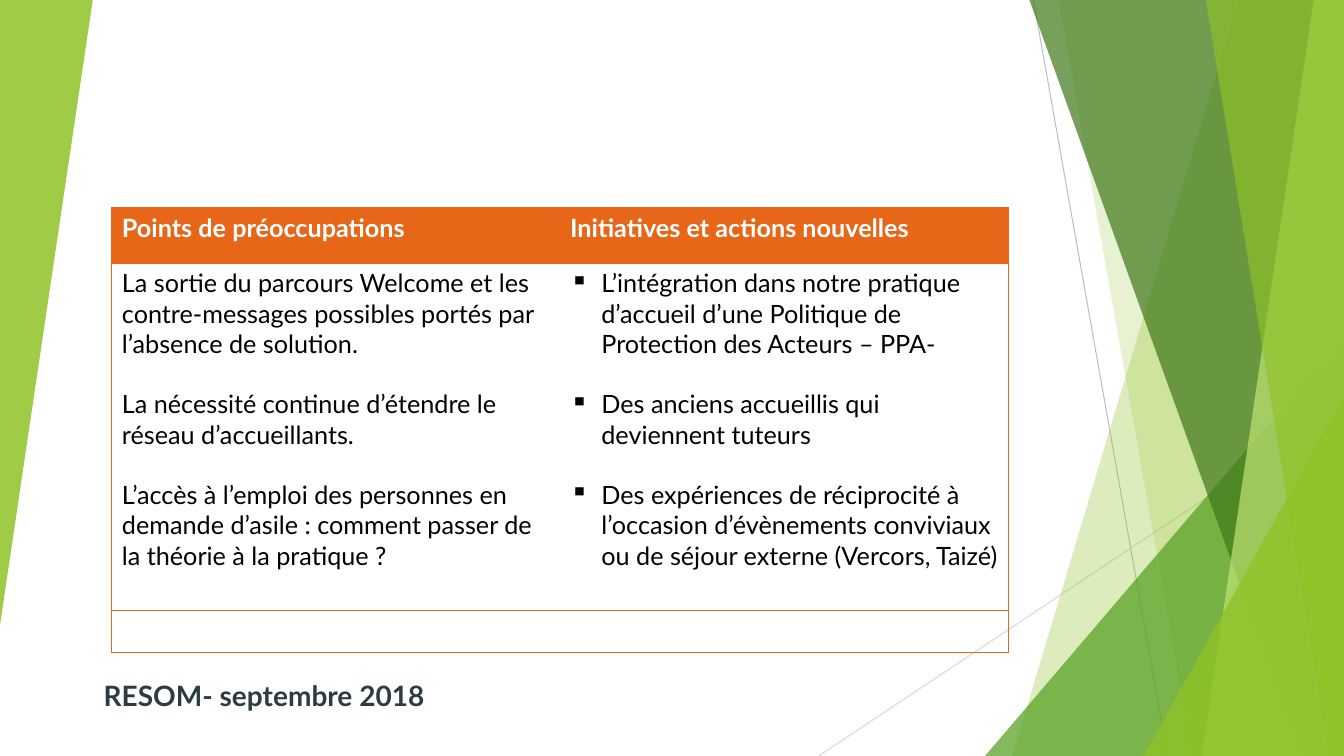
import pptx
import pptx.util
import pptx.dml.color
import pptx.enum.shapes
import pptx.enum.text
import pptx.oxml
import pptx.oxml.ns
from lxml import etree

Inches, Pt = pptx.util.Inches, pptx.util.Pt
RGBColor = pptx.dml.color.RGBColor
qn = pptx.oxml.ns.qn

LIME = RGBColor(0x90, 0xC2, 0x26)
GREEN = RGBColor(0x54, 0xA0, 0x21)
FOREST = RGBColor(0x3F, 0x78, 0x19)
PALE_LIME = RGBColor(0xC0, 0xE4, 0x74)
ORANGE = RGBColor(0xE7, 0x66, 0x18)
SLATE = RGBColor(0x2C, 0x3C, 0x43)
GREY = RGBColor(0xBF, 0xBF, 0xBF)
LIGHT_GREY = RGBColor(0xD9, 0xD9, 0xD9)
WHITE = RGBColor(0xFF, 0xFF, 0xFF)
BLACK = RGBColor(0, 0, 0)

FONT = "Lato"
WIDTH, HEIGHT = 13.33, 7.5
FOOTER = "RESOM- septembre 2018"
HEADINGS = ["Points de préoccupations", "Initiatives et actions nouvelles"]
CONCERNS = [
    "La sortie du parcours Welcome et les contre-messages possibles portés par l’absence de solution.",
    "La nécessité continue d’étendre le réseau d’accueillants.",
    "L’accès à l’emploi des personnes en demande d’asile : comment passer de la théorie à la pratique ?",
]
INITIATIVES = [
    "L’intégration dans notre pratique d’accueil d’une Politique de Protection des Acteurs – PPA-",
    "Des anciens accueillis qui deviennent tuteurs",
    "Des expériences de réciprocité à l’occasion d’évènements conviviaux ou de séjour externe (Vercors, Taizé)",
]
TABLE_LEFT, TABLE_TOP, TABLE_WIDTH = 1.11, 2.06, 8.89
ROW_HEIGHTS = [0.55, 3.45, 0.41]

LINES = [
    ((10.25, 0), (11.58, HEIGHT), GREY),
    ((WIDTH, 4.03), (8.12, HEIGHT), LIGHT_GREY),
]
BANDS_AND_TRIANGLES = [
    ("band", 12.28, 10.04, LIME, 30),
    ("band", 10.5, 11.83, LIME, 20),
    ("triangle", (9.77, 3.33, 3.56, 4.17), 0, GREEN, 72),
    ("band", 10.21, 12.91, FOREST, 70),
    ("band", 13.03, 11.92, PALE_LIME, 70),
    ("band", 11.96, 13.18, LIME, 65),
    ("triangle", (11.34, 3.93, 1.99, 3.57), 0, LIME, 80),
    ("triangle", (0, 0, 0.92, 6.2), 180, LIME, 85),
]


def paint(shape, color, opacity):
    shape.shadow.inherit = False
    shape.line.fill.background()
    shape.fill.solid()
    shape.fill.fore_color.rgb = color
    tint = shape._element.spPr.find(qn("a:solidFill"))[0]
    etree.SubElement(tint, qn("a:alpha")).set("val", str(opacity * 1000))


def add_line(slide, start, end, color):
    points = [Inches(value) for value in start + end]
    line = slide.shapes.add_connector(pptx.enum.shapes.MSO_CONNECTOR.STRAIGHT, *points)
    line.line.color.rgb = color
    line.line.width = Pt(0.75)
    etree.SubElement(line._element.spPr, qn("a:effectLst"))


def add_band(slide, top_x, bottom_x, color, opacity):
    builder = slide.shapes.build_freeform(Inches(top_x), 0)
    corners = [(WIDTH, 0), (WIDTH, HEIGHT), (bottom_x, HEIGHT)]
    builder.add_line_segments([(Inches(x), Inches(y)) for x, y in corners], close=True)
    paint(builder.convert_to_shape(), color, opacity)


def add_triangle(slide, box, rotation, color, opacity):
    triangle = slide.shapes.add_shape(
        pptx.enum.shapes.MSO_SHAPE.ISOSCELES_TRIANGLE, *[Inches(value) for value in box])
    triangle.adjustments[0] = 1
    triangle.rotation = rotation
    paint(triangle, color, opacity)


def set_font(paragraph, size, color, bold):
    font = paragraph.font
    font.name, font.size, font.bold = FONT, Pt(size), bold
    font.color.rgb = color


def add_bullet(paragraph):
    properties = paragraph._p.get_or_add_pPr()
    properties.set("marL", str(Inches(0.31)))
    properties.set("indent", str(-Inches(0.31)))
    bullet = etree.Element(qn("a:buChar"))
    bullet.set("char", "▪")
    properties.insert_element_before(bullet, "a:tabLst", "a:defRPr", "a:extLst")


def add_borders(cell, sides):
    properties = cell._tc.get_or_add_tcPr()
    for index, side in enumerate(sides):
        border = etree.Element(qn("a:ln" + side))
        border.set("w", str(Pt(1)))
        fill = etree.SubElement(border, qn("a:solidFill"))
        etree.SubElement(fill, qn("a:srgbClr")).set("val", str(ORANGE))
        properties.insert(index, border)


def fill_cell(cell, texts, color, bold, bulleted):
    cell.text = "\n".join(texts)
    paragraphs = cell.text_frame.paragraphs
    for paragraph in paragraphs:
        set_font(paragraph, 18, color, bold)
        if bulleted:
            add_bullet(paragraph)
    for paragraph in paragraphs[:-1]:
        paragraph.space_after = Pt(21.6)


def add_points_table(slide):
    table = slide.shapes.add_table(
        len(ROW_HEIGHTS), len(HEADINGS), Inches(TABLE_LEFT), Inches(TABLE_TOP),
        Inches(TABLE_WIDTH), Inches(sum(ROW_HEIGHTS))).table
    table.horz_banding = False
    style = table._tbl.tblPr.find(qn("a:tableStyleId"))
    style.text = "{2D5ABB26-0587-4C30-8999-92F81FD0307C}"
    for row, height in zip(table.rows, ROW_HEIGHTS):
        row.height = Inches(height)
    for column, (heading, points) in enumerate(zip(HEADINGS, [CONCERNS, INITIATIVES])):
        for row, texts in enumerate([[heading], points, [""]]):
            cell = table.cell(row, column)
            is_heading = row == 0
            fill_cell(cell, texts, WHITE if is_heading else BLACK, is_heading,
                      row == 1 and column == 1)
            if is_heading:
                cell.fill.solid()
                cell.fill.fore_color.rgb = ORANGE
            else:
                cell.fill.background()
            add_borders(cell, "RTB" if column else "LTB")


def add_footer(slide):
    box = slide.shapes.add_textbox(Inches(0.93), Inches(0.58), Inches(9.54), Inches(6.53))
    frame = box.text_frame
    frame.word_wrap = True
    frame.vertical_anchor = pptx.enum.text.MSO_ANCHOR.BOTTOM
    frame.text = FOOTER
    set_font(frame.paragraphs[0], 20, SLATE, True)


def main():
    presentation = pptx.Presentation()
    presentation.slide_width = Inches(WIDTH)
    presentation.slide_height = Inches(HEIGHT)
    slide = presentation.slides.add_slide(presentation.slide_layouts[6])
    for line in LINES:
        add_line(slide, *line)
    builders = {"band": add_band, "triangle": add_triangle}
    for kind, *details in BANDS_AND_TRIANGLES:
        builders[kind](slide, *details)
    add_footer(slide)
    add_points_table(slide)
    presentation.save("out.pptx")


if __name__ == "__main__":
    main()
